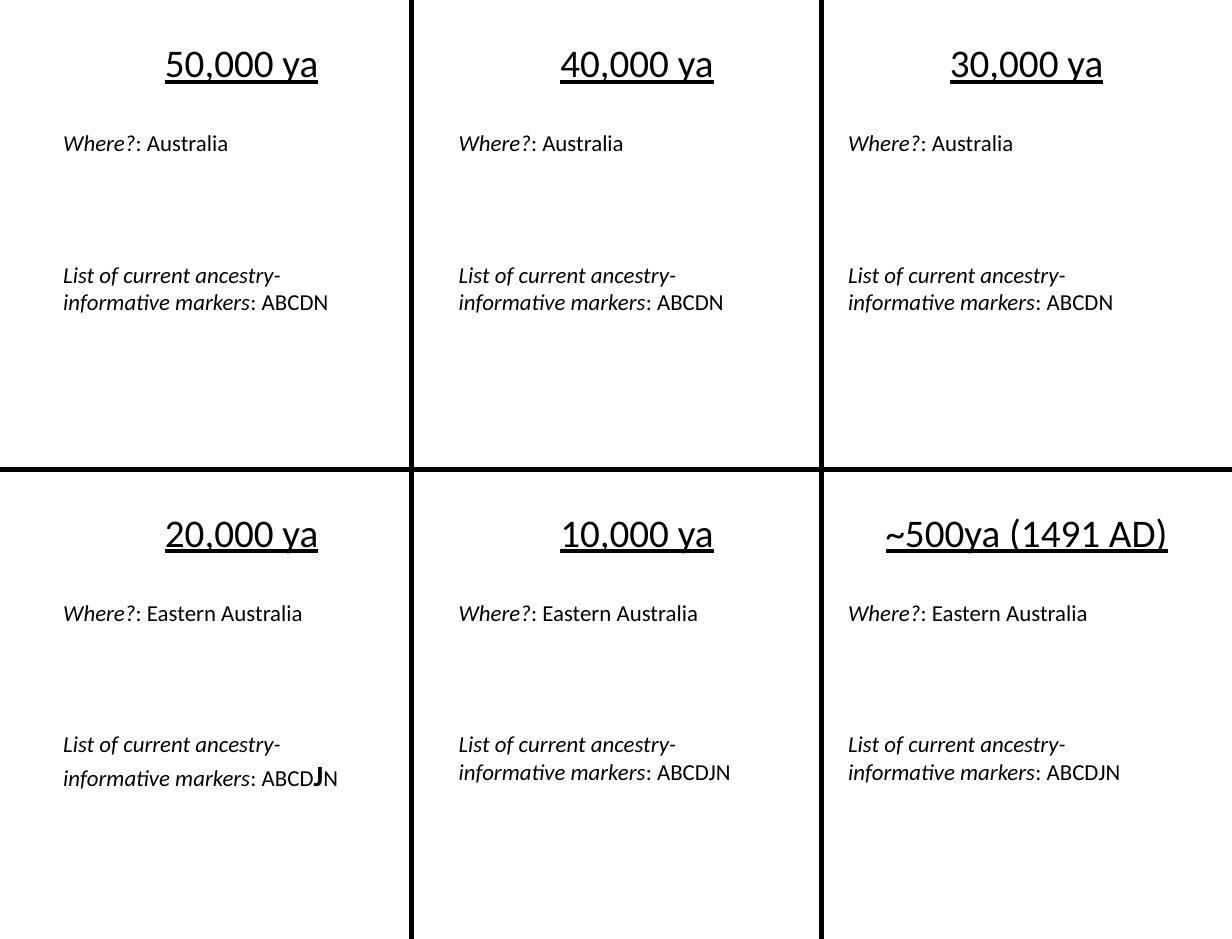
from pptx import Presentation
from pptx.dml.color import RGBColor
from pptx.enum.shapes import MSO_CONNECTOR as Connector
from pptx.enum.text import MSO_AUTO_SIZE as AutoSize, PP_ALIGN as Align
from pptx.oxml.ns import qn
from pptx.util import Inches, Pt
from lxml.etree import SubElement

WIDTH, HEIGHT = 10.5, 8
ROW_HEIGHT = HEIGHT / 2
COLUMN_LEFTS = (0.44, 3.81, 7.13)
DIVIDERS = (3.51, 7)

PERIODS = (
    (
        ("50,000 ya", "Australia", ("ABCDN",)),
        ("40,000 ya", "Australia", ("ABCDN",)),
        ("30,000 ya", "Australia", ("ABCDN",)),
    ),
    (
        ("20,000 ya", "Eastern Australia", ("ABCD", "J", "N")),
        ("10,000 ya", "Eastern Australia", ("ABCDJN",)),
        ("~500ya (1491 AD)", "Eastern Australia", ("ABCDJN",)),
    ),
)


def color(value):
    return RGBColor.from_string(value)


class TimelineSlide:
    font = "Calibri"
    ink = "000000"
    title_size = 24
    body_size = 14
    new_marker_size = 18
    line_width = 3

    def __init__(self, presentation):
        self.slide = presentation.slides.add_slide(presentation.slide_layouts[6])

    def divider(self, x1, y1, x2, y2):
        line = self.slide.shapes.add_connector(
            Connector.STRAIGHT, Inches(x1), Inches(y1), Inches(x2), Inches(y2)
        )
        line.line.color.rgb = color(self.ink)
        line.line.width = Pt(self.line_width)
        SubElement(line._element.spPr, qn("a:effectLst"))

    def paragraph(self, left, top, width, height, align=Align.LEFT):
        box = self.slide.shapes.add_textbox(
            Inches(left), Inches(top), Inches(width), Inches(height)
        )
        frame = box.text_frame
        frame.word_wrap = True
        frame.auto_size = AutoSize.SHAPE_TO_FIT_TEXT
        paragraph = frame.paragraphs[0]
        paragraph.alignment = align
        return paragraph

    def run(self, paragraph, text, size, bold=False, italic=False, underline=False):
        run = paragraph.add_run()
        run.text = text
        font = run.font
        font.name = self.font
        font.size = Pt(size)
        font.color.rgb = color(self.ink)
        font.bold = bold
        font.italic = italic
        font.underline = underline

    def title(self, left, top, text):
        paragraph = self.paragraph(left, top, 3.24, 0.5, Align.CENTER)
        self.run(paragraph, text, self.title_size, underline=True)

    def entry(self, left, top, height, label, value, new_marker="", rest=""):
        paragraph = self.paragraph(left, top, 2.85, height)
        self.run(paragraph, label, self.body_size, italic=True)
        self.run(paragraph, f": {value}", self.body_size)
        if new_marker:
            self.run(paragraph, new_marker, self.new_marker_size, bold=True)
            self.run(paragraph, rest, self.body_size)

    def period(self, left, top, date, place, markers):
        self.title(left, top + 0.28, date)
        self.entry(left, top + 1.05, 0.34, "Where?", place)
        height = 0.64 if len(markers) > 1 else 0.57
        label = "List of current ancestry-informative markers"
        self.entry(left, top + 2.17, height, label, *markers)


def main():
    presentation = Presentation()
    presentation.slide_width = Inches(WIDTH)
    presentation.slide_height = Inches(HEIGHT)
    timeline = TimelineSlide(presentation)
    timeline.divider(0, ROW_HEIGHT, WIDTH, ROW_HEIGHT)
    for x in DIVIDERS:
        timeline.divider(x, 0, x, HEIGHT)
    for row, periods in enumerate(PERIODS):
        for left, period in zip(COLUMN_LEFTS, periods):
            timeline.period(left, row * ROW_HEIGHT, *period)
    presentation.save("out.pptx")


if __name__ == "__main__":
    main()
